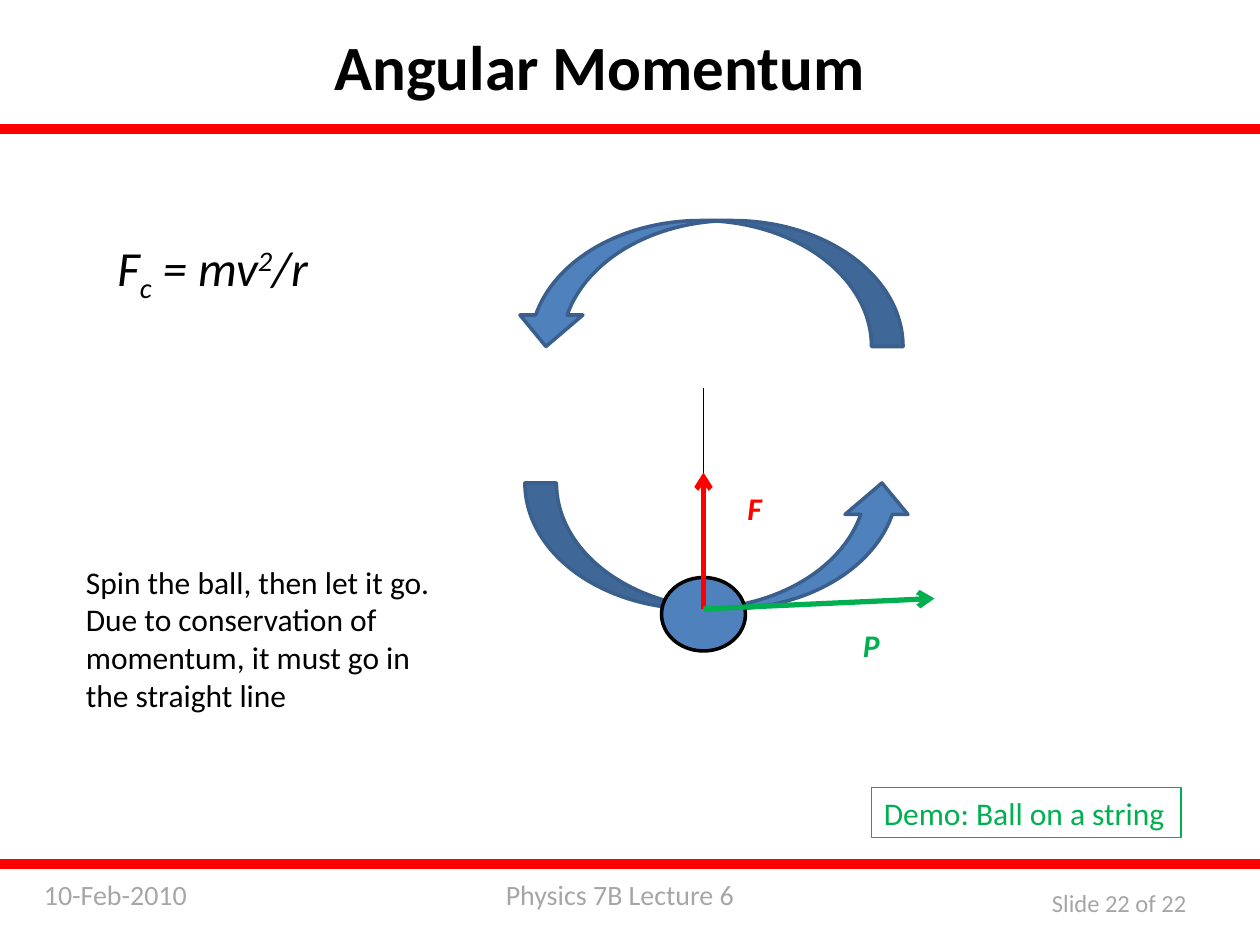
from dataclasses import dataclass
from typing import Optional

from lxml import etree
from pptx import Presentation
from pptx import util as u
from pptx.dml.color import RGBColor
from pptx.enum import shapes, text
from pptx.oxml import ns

COLS, ROWS = 120, 90


@dataclass(frozen=True)
class Theme:
    font: str = "Calibri"
    ink: str = "000000"
    red: str = "FF0000"
    green: str = "00B050"
    blue: str = "4F81BD"
    edge: str = "3A5F8C"
    gray: str = "A6A6A6"
    title: int = 36
    formula: int = 28
    body: int = 18
    footer: int = 16
    number: int = 14
    hairline: float = 0.75
    outline: float = 2
    vector: float = 3


@dataclass(frozen=True)
class Box:
    col: float
    row: float
    cols: float
    rows: float


@dataclass(frozen=True)
class Label:
    box: Box
    runs: tuple[tuple[str, int], ...]
    size: int
    color: str
    bold: bool = False
    italic: bool = False
    wrap: bool = False
    border: Optional[str] = None


@dataclass(frozen=True)
class Figure:
    kind: shapes.MSO_SHAPE
    box: Box
    fill: str
    line: str
    rotation: float = 0


@dataclass(frozen=True)
class Line:
    start: tuple[float, float]
    end: tuple[float, float]
    color: str
    width: float
    arrow: bool = True


T = Theme()
prs = Presentation()
prs.slide_width, prs.slide_height = u.Inches(10), u.Inches(7.5)


def x(col: float) -> int:
    return round(prs.slide_width * col / COLS)


def y(row: float) -> int:
    return round(prs.slide_height * row / ROWS)


def place(box: Box) -> tuple[int, int, int, int]:
    return x(box.col), y(box.row), x(box.cols), y(box.rows)


def write(sp, label: Label, align=text.PP_ALIGN.LEFT) -> None:
    tf = sp.text_frame
    tf.word_wrap = label.wrap
    tf.auto_size = text.MSO_AUTO_SIZE.SHAPE_TO_FIT_TEXT
    tf.vertical_anchor = text.MSO_ANCHOR.TOP
    p = tf.paragraphs[0]
    p.alignment = align
    p.font.name, p.font.size = T.font, u.Pt(label.size)
    p.font.bold, p.font.italic = label.bold, label.italic
    p.font.color.rgb = RGBColor.from_string(label.color)
    for content, baseline in label.runs:
        r = p.add_run()
        r.text = content
        if baseline:
            r._r.get_or_add_rPr().set("baseline", str(baseline * 1000))


def add_title(s, label: Label) -> None:
    sp = s.shapes.title
    sp.left, sp.top, sp.width, sp.height = place(label.box)
    write(sp, label, text.PP_ALIGN.CENTER)


def add_label(s, label: Label) -> None:
    sp = s.shapes.add_textbox(*place(label.box))
    write(sp, label)
    if label.border:
        sp.line.color.rgb = RGBColor.from_string(label.border)
        sp.line.width = u.Pt(T.hairline)


def add_figure(s, figure: Figure) -> None:
    sp = s.shapes.add_shape(figure.kind, *place(figure.box))
    sp.shadow.inherit = False
    sp.rotation = figure.rotation
    sp.fill.solid()
    sp.fill.fore_color.rgb = RGBColor.from_string(figure.fill)
    sp.line.color.rgb = RGBColor.from_string(figure.line)
    sp.line.width = u.Pt(T.outline)


def add_line(s, line: Line) -> None:
    (c1, r1), (c2, r2) = line.start, line.end
    sp = s.shapes.add_connector(shapes.MSO_CONNECTOR.STRAIGHT, x(c1), y(r1), x(c2), y(r2))
    sp.line.color.rgb = RGBColor.from_string(line.color)
    sp.line.width = u.Pt(line.width)
    if line.arrow:
        etree.SubElement(sp.line._get_or_add_ln(), ns.qn("a:tailEnd"), type="arrow")
    etree.SubElement(sp._element.spPr, ns.qn("a:effectLst"))


def plain(content: str) -> tuple[tuple[str, int], ...]:
    return ((content, 0),)


TITLE = Label(Box(30.36, 2, 53.5, 8.5), plain("Angular Momentum"), T.title, T.ink, bold=True)
SHAPE = shapes.MSO_SHAPE
BARS = [Figure(SHAPE.RECTANGLE, Box(0, row, COLS, 0.6), T.red, T.red) for row in (12, 82)]
FIGURES = BARS + [
    Figure(SHAPE.CURVED_UP_ARROW, Box(50, 46, 37, 12), T.blue, T.edge),
    Figure(SHAPE.OVAL, Box(63, 55, 8, 7), T.blue, T.ink),
    Figure(SHAPE.CURVED_UP_ARROW, Box(49, 21, 37, 12), T.blue, T.edge, rotation=180),
]
BALL = (67, 58)
LINES = [
    Line((67, 37), (67, 55), T.ink, T.hairline, arrow=False),
    Line(BALL, (67, 45), T.red, T.vector),
    Line(BALL, (89, 57), T.green, T.vector),
]
FORMULA = (("F", 0), ("c", -25), (" = mv", 0), ("2", 30), ("/r", 0))
ADVICE = ("Spin the ball, then let it go. Due to conservation of momentum, "
          "it must go in the straight line")
LABELS = [
    Label(Box(47, 83, 24.5, 4.4), plain("Physics 7B Lecture 6"), T.footer, T.gray),
    Label(Box(3, 83, 20, 4.4), plain("10-Feb-2010"), T.footer, T.gray, wrap=True),
    Label(Box(99, 84, 15.7, 4), plain("Slide 22 of 22"), T.number, T.gray),
    Label(Box(83, 75, 29.5, 4.8), plain("Demo: Ball on a string"), T.body, T.green,
          border=T.green),
    Label(Box(70, 46, 3.8, 4.8), plain("F"), T.body, T.red, bold=True, italic=True),
    Label(Box(81, 59, 4.1, 4.8), plain("P"), T.body, T.green, bold=True, italic=True),
    Label(Box(10, 22, 21.7, 6.8), FORMULA, T.formula, T.ink, italic=True),
    Label(Box(7, 53, 37, 15.7), plain(ADVICE), T.body, T.ink, wrap=True),
]


def main() -> None:
    s = prs.slides.add_slide(prs.slide_layouts[5])
    add_title(s, TITLE)
    for figure in FIGURES:
        add_figure(s, figure)
    for line in LINES:
        add_line(s, line)
    for label in LABELS:
        add_label(s, label)
    prs.save("out.pptx")


if __name__ == "__main__":
    main()
